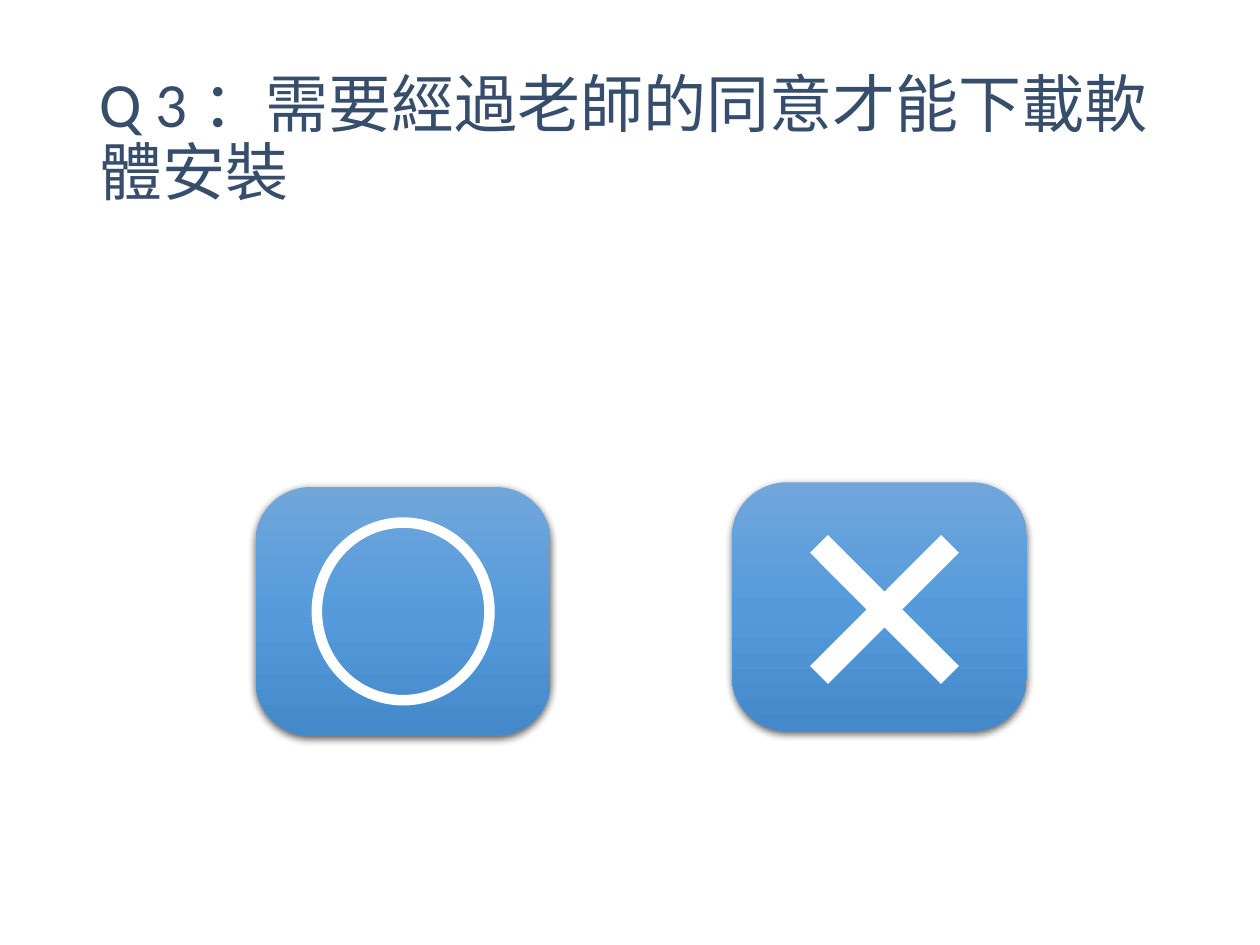
from lxml import etree
from pptx import Presentation
from pptx.dml.color import RGBColor
from pptx.enum.shapes import MSO_SHAPE
from pptx.enum.text import MSO_ANCHOR
from pptx.oxml import parse_xml
from pptx.util import Inches, Pt

ROUNDED = MSO_SHAPE.ROUNDED_RECTANGLE
OVAL = MSO_SHAPE.OVAL
MULTIPLY = MSO_SHAPE.MATH_MULTIPLY
MIDDLE = MSO_ANCHOR.MIDDLE
NS = "http://schemas.openxmlformats.org/drawingml/2006/main"
COLORS = {
    "title": "374D6C",
    "mark": "FFFFFF",
    "top": "71A6DB",
    "middle": "559BDB",
    "bottom": "448ACA",
    "shadow": "000000",
}


class QuizSlide:
    font = "Calibri"
    title_size = 36

    def __init__(self, prs):
        self.width, self.height = prs.slide_width, prs.slide_height
        self.s = prs.slides.add_slide(prs.slide_layouts[6])

    def box(self, x, y, w, h):
        return (round(x * self.width), round(y * self.height),
                round(w * self.width), round(h * self.height))

    def rgb(self, name):
        return RGBColor.from_string(COLORS[name])

    def shape(self, kind, center, size):
        (cx, cy), (w, h) = center, size
        sp = self.s.shapes.add_shape(
            kind, *self.box(cx - w / 2, cy - h / 2, w, h))
        sp.shadow.inherit = False
        sp.line.fill.background()
        return sp

    def title(self, text, x, y, w, h):
        tf = self.s.shapes.add_textbox(*self.box(x, y, w, h)).text_frame
        tf.word_wrap = True
        tf.vertical_anchor = MIDDLE
        p = tf.paragraphs[0]
        p.text = text
        p.line_spacing = 0.9
        p.font.name = self.font
        p.font.size = Pt(self.title_size)
        p.font.color.rgb = self.rgb("title")

    def button(self, center):
        sp = self.shape(ROUNDED, center, (0.234, 0.263))
        sp.adjustments[0] = 0.22
        sp.fill.gradient()
        sp.fill.gradient_angle = 270
        props = sp._element.spPr
        stops = props.find(f".//{{{NS}}}gsLst")
        for stop in list(stops):
            stops.remove(stop)
        for pos, name in ((0, "top"), (50, "middle"), (100, "bottom")):
            stop = etree.SubElement(stops, f"{{{NS}}}gs", pos=str(pos * 1000))
            etree.SubElement(stop, f"{{{NS}}}srgbClr", val=COLORS[name])
        effects = props.find(f"{{{NS}}}effectLst")
        effects.append(parse_xml(
            f'<a:outerShdw xmlns:a="{NS}" blurRad="{Pt(4.5)}" dist="{Pt(1.5)}" '
            f'dir="5400000" algn="ctr" rotWithShape="0">'
            f'<a:srgbClr val="{COLORS["shadow"]}"><a:alpha val="63000"/>'
            f'</a:srgbClr></a:outerShdw>'))

    def circle(self, center):
        sp = self.shape(OVAL, center, (0.137, 0.188))
        sp.fill.background()
        sp.line.color.rgb = self.rgb("mark")
        sp.line.width = Pt(6)

    def cross(self, center):
        sp = self.shape(MULTIPLY, center, (0.2, 0.267))
        sp.adjustments[0] = 0.1
        sp.fill.solid()
        sp.fill.fore_color.rgb = self.rgb("mark")


def main():
    prs = Presentation()
    prs.slide_width, prs.slide_height = Inches(10), Inches(7.5)
    quiz = QuizSlide(prs)
    quiz.title("Q 3 ：需要經過老師的同意才能下載軟體安裝",
               0.069, 0.053, 0.862, 0.193)
    yes, no = (0.32, 0.647), (0.698, 0.642)
    for center in (yes, no):
        quiz.button(center)
    quiz.circle(yes)
    quiz.cross((0.702, 0.645))
    prs.save("out.pptx")


if __name__ == "__main__":
    main()
